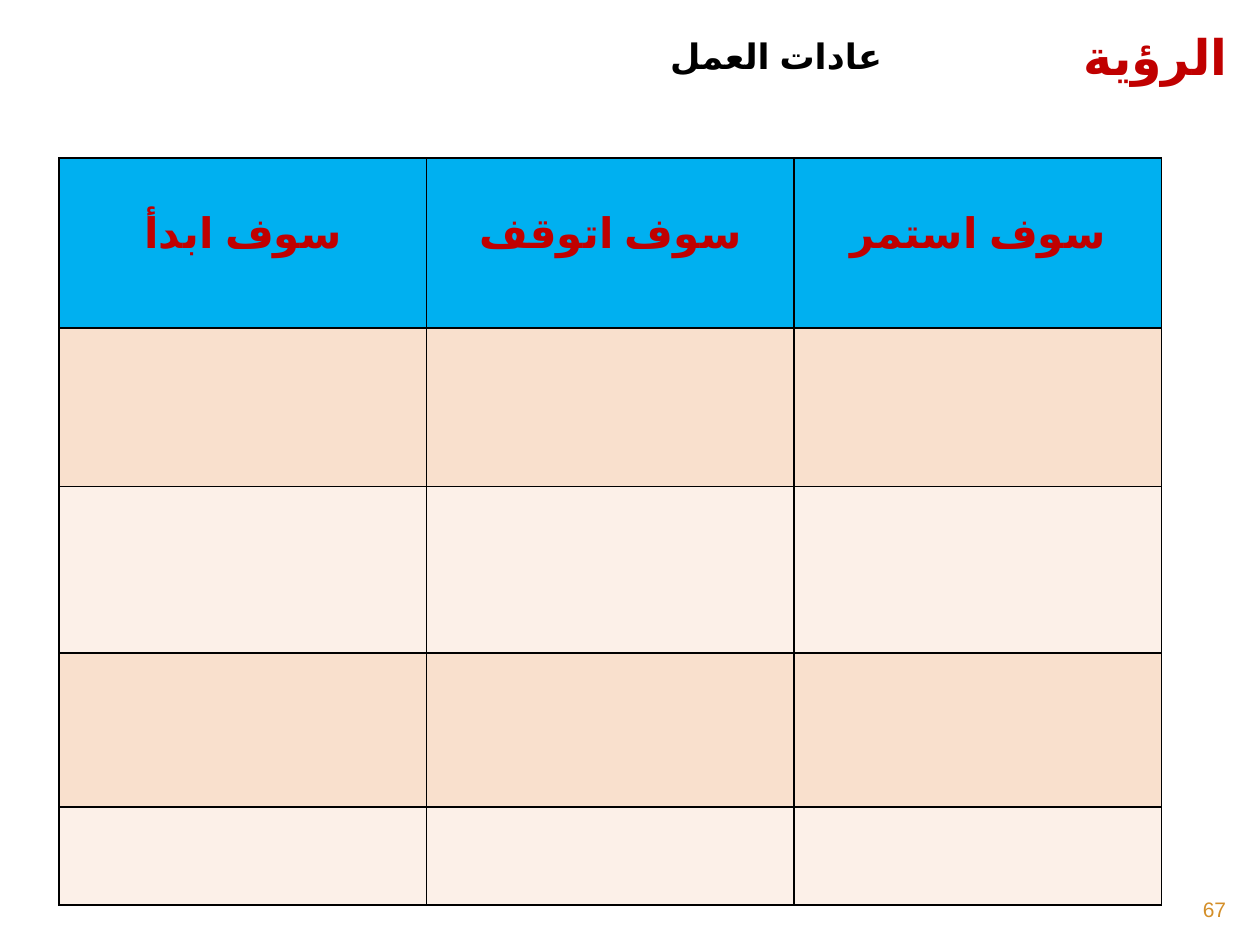
from lxml import etree
from pptx import Presentation
from pptx import util as u
from pptx.dml.color import RGBColor
from pptx.enum import lang, text
from pptx.oxml.ns import qn

WIDTH, HEIGHT = u.Inches(10), u.Inches(7.5)
COLOURS = {
    "accent": "C00000",
    "ink": "000000",
    "number": "D48F29",
    "header": "00B0F0",
    "band_dark": "F9E0CD",
    "band_light": "FCF0E8",
}
ARABIC_FACE = "Arial"
HABITS = ["سوف ابدأ", "سوف اتوقف", "سوف استمر"]
ROW_HEIGHTS = [1.35, 1.26, 1.32, 1.22, 0.78]


def colour(name):
    return RGBColor.from_string(COLOURS[name])


def write_rtl(frame, words, size, face, ink, align, bold=True):
    """Write one right-to-left paragraph in Arabic, with its Arabic face."""
    line = frame.paragraphs[0]
    line.text = words
    line.alignment = align
    font = line.font
    font.size, font.name, font.bold = u.Pt(size), face, bold
    font.color.rgb = colour(ink)
    font.language_id = lang.MSO_LANGUAGE_ID.ARABIC
    properties = line._p.get_or_add_pPr()
    properties.set("rtl", "1")
    arabic = etree.SubElement(properties.find(qn("a:defRPr")), qn("a:cs"))
    arabic.set("typeface", ARABIC_FACE)


def add_label(slide, box, words, size, face, ink, bold=True):
    label = slide.shapes.add_textbox(*box).text_frame
    label.word_wrap = True
    label.vertical_anchor = text.MSO_ANCHOR.MIDDLE
    write_rtl(label, words, size, face, ink, text.PP_ALIGN.RIGHT, bold)


def add_heading(slide, left, top, width, height):
    """Topic at the right end of the band, subtopic to its left."""
    topic_left = left + int(width * 0.79)
    add_label(slide, (topic_left, top, left + width - topic_left, height),
              "الرؤية", 28, "Calibri", "accent")
    add_label(slide, (left, top, int(width * 0.656), height),
              "عادات العمل", 20, "Arial", "ink")


def outline_cell(cell):
    properties = cell._tc.get_or_add_tcPr()
    for side in ("lnL", "lnR", "lnT", "lnB"):
        border = etree.SubElement(properties, qn(f"a:{side}"), w=str(u.Pt(1)))
        fill = etree.SubElement(border, qn("a:solidFill"))
        etree.SubElement(fill, qn("a:srgbClr"), val=COLOURS["ink"])


def add_habits_table(slide, left, top, width, height):
    grid = slide.shapes.add_table(len(ROW_HEIGHTS), len(HABITS),
                                  left, top, width, height).table
    for column in grid.columns:
        column.width = width // len(HABITS)
    for index, (row, share) in enumerate(zip(grid.rows, ROW_HEIGHTS)):
        row.height = int(height * share / sum(ROW_HEIGHTS))
        band = "band_dark" if index % 2 else "band_light"
        for cell in row.cells:
            outline_cell(cell)
            cell.fill.solid()
            cell.fill.fore_color.rgb = colour(band if index else "header")
    for cell, habit in zip(grid.rows[0].cells, HABITS):
        cell.margin_top = u.Inches(0.42)
        write_rtl(cell.text_frame, habit, 24, "Arial", "accent",
                  text.PP_ALIGN.CENTER)


def main():
    deck = Presentation()
    deck.slide_width, deck.slide_height = WIDTH, HEIGHT
    slide = deck.slides.add_slide(deck.slide_layouts[6])

    def area(left, top, width, height):
        """Turn shares of the slide into lengths."""
        return (int(WIDTH * left), int(HEIGHT * top),
                int(WIDTH * width), int(HEIGHT * height))

    add_label(slide, area(0.9, 0.944, 0.083, 0.036),
              "67", 12, "Karla", "number", bold=False)
    add_heading(slide, *area(0.187, 0.021, 0.797, 0.076))
    add_habits_table(slide, *area(0.047, 0.167, 0.875, 0.791))
    deck.save("out.pptx")


if __name__ == "__main__":
    main()
